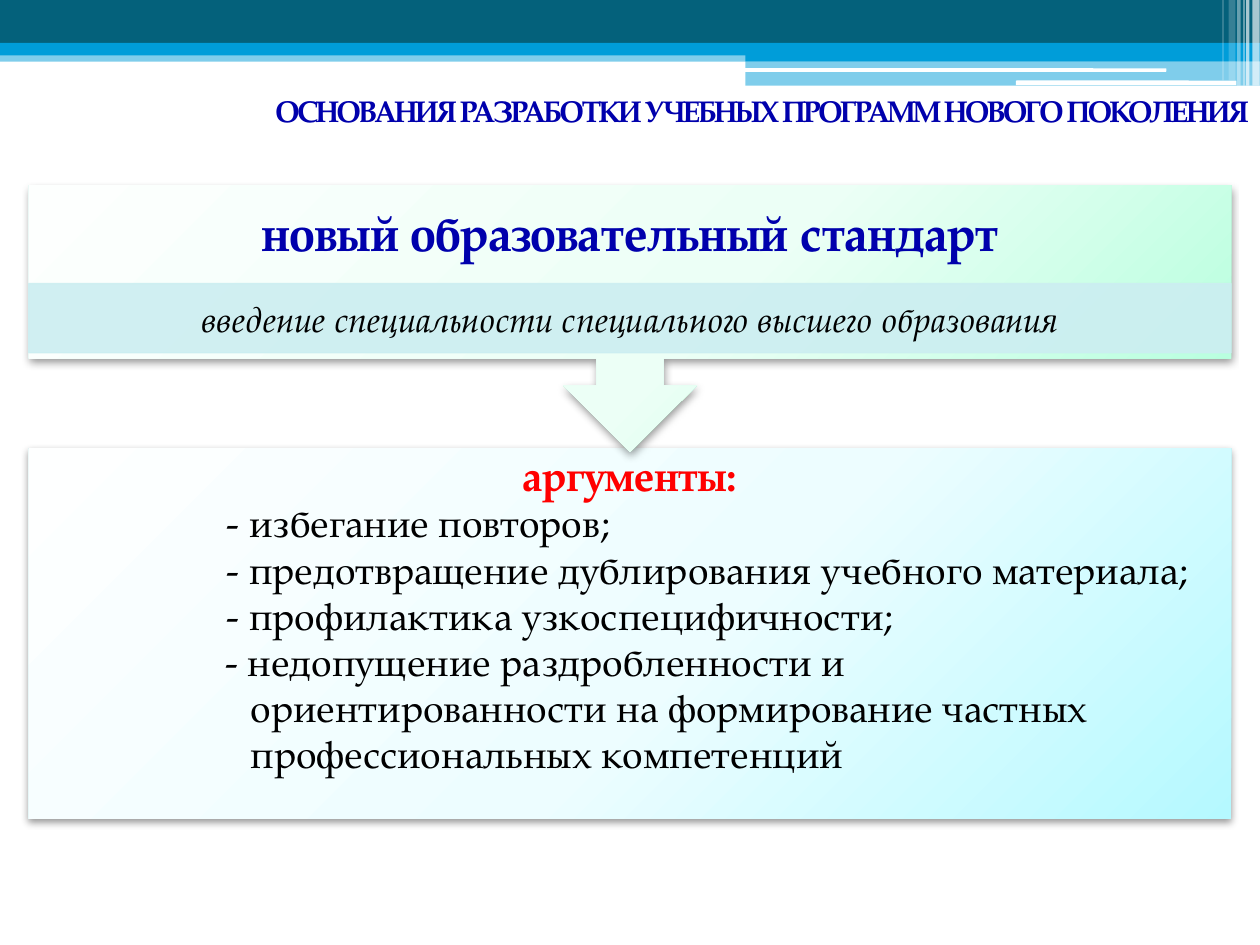
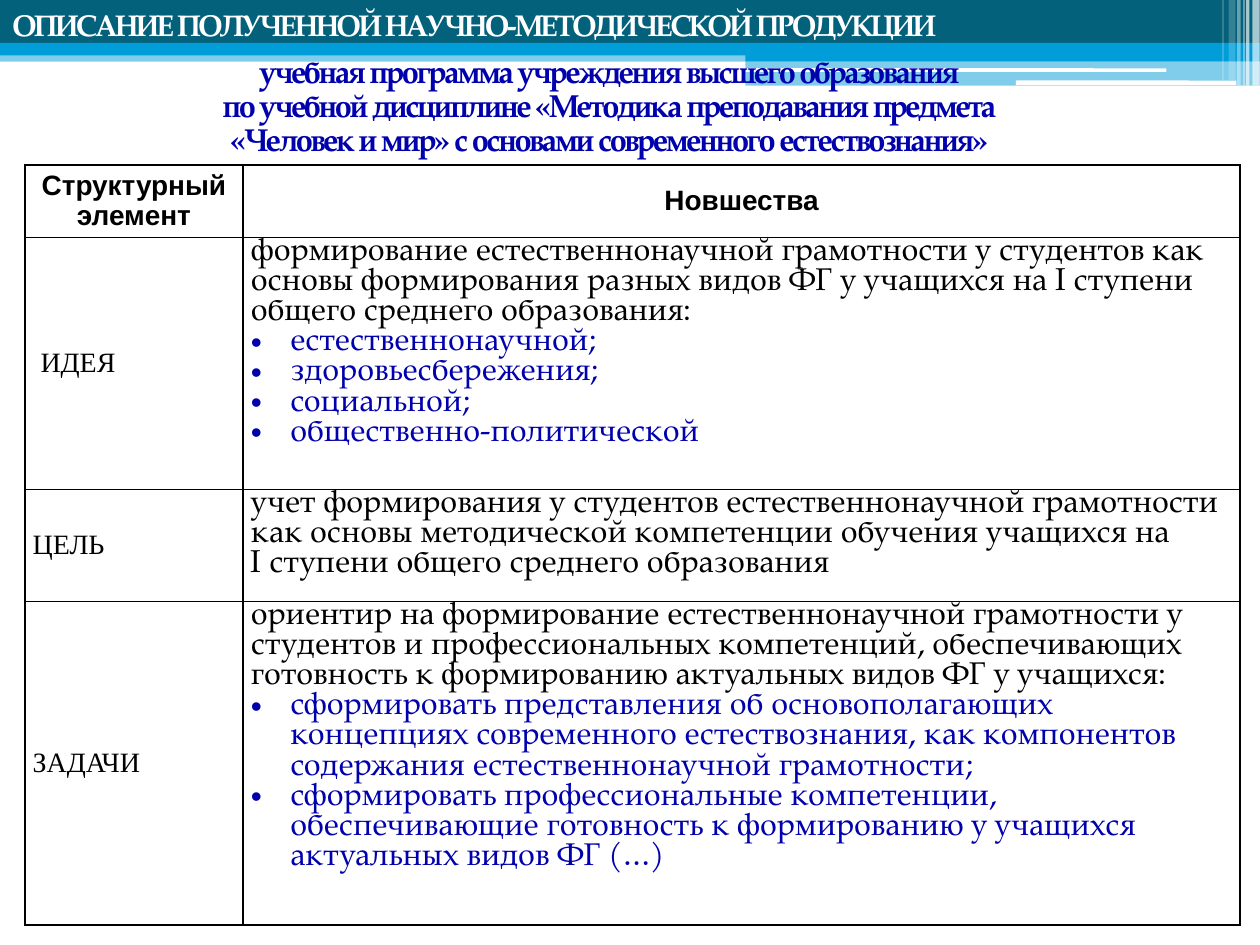
from pptx import Presentation, util as u
from pptx.dml.color import RGBColor
from pptx.enum import shapes, text
from pptx.oxml import parse_xml
from pptx.oxml.ns import nsdecls, qn

SERIF, SANS, TIMES = "TeX Gyre Pagella", "Arial", "Times New Roman"
TEAL, BLUE, WHITE, BLACK = "04617B", "009DD9", "FFFFFF", "000000"
NAVY, RED, PALE = "0000AC", "FF0000", "CCEEF1"
CENTER, RIGHT = text.PP_ALIGN.CENTER, text.PP_ALIGN.RIGHT
TOP, MIDDLE = text.MSO_ANCHOR.TOP, text.MSO_ANCHOR.MIDDLE
RECT, ROUND = shapes.MSO_SHAPE.RECTANGLE, shapes.MSO_SHAPE.ROUNDED_RECTANGLE
CALLOUT = shapes.MSO_SHAPE.UP_ARROW_CALLOUT

BANDS = [
    (0, 28.8, 720, 6.5, BLUE, 50),
    (0, 0, 720, 24.5, TEAL, 100),
    (0, 24.5, 720, 7.2, BLUE, 100),
    (426, 28, 294, 7, BLUE, 100),
    (426, 35, 294, 14, BLUE, 50),
]
PILLS = [(425.5, 39, 241, 2), (580.5, 46, 126, 2.7)]
STRIPES = [
    (715.6, 4.2, 49, 65),
    (712, 2, 49, 65),
    (710.5, 0.7, 49, 60),
    (707, 2, 49, 40),
    (702, 4, 46, 20),
    (698.5, 0.7, 46, 30),
]
MINT_STOPS = [(0, "FDFFFE"), (55, "ECFFF6"), (100, "B1FFDB")]
AQUA_STOPS = [(0, "FEFFFF"), (55, "EDFDFF"), (100, "B5F9FF")]

ARGUMENTS = [
    "- избегание повторов;",
    "- предотвращение дублирования учебного материала;",
    "- профилактика узкоспецифичности;",
]
LAST_ARGUMENT = ("- недопущение раздробленности и ориентированности на "
                 "формирование частных профессиональных компетенций")
PROGRAMME = [
    "учебная программа учреждения высшего образования",
    "по учебной дисциплине «Методика преподавания предмета",
    "«Человек и мир» с основами современного естествознания»",
]
HEADINGS = ["Структурный элемент", "Новшества"]
ELEMENTS = [
    ("ИДЕЯ", 4.5,
     ["формирование естественнонаучной грамотности у студентов как основы "
      "формирования разных видов ФГ у учащихся на I ступени общего среднего "
      "образования:"],
     ["естественнонаучной;", "здоровьесбережения;", "социальной;",
      "общественно-политической"]),
    ("ЦЕЛЬ", 0,
     ["учет формирования у студентов естественнонаучной грамотности как "
      "основы методической компетенции обучения учащихся на",
      "I ступени общего среднего образования"],
     []),
    ("ЗАДАЧИ", 0,
     ["ориентир на формирование естественнонаучной грамотности у студентов и "
      "профессиональных компетенций, обеспечивающих готовность к формированию "
      "актуальных видов ФГ у учащихся:"],
     ["сформировать представления об основополагающих концепциях современного "
      "естествознания, как компонентов содержания естественнонаучной "
      "грамотности;",
      "сформировать профессиональные компетенции, обеспечивающие готовность "
      "к формированию у учащихся актуальных видов ФГ (…)"]),
]


def rgb(value):
    """Turn a hex string into a colour."""
    return RGBColor.from_string(value)


def write(frame, content, size=18, font=SERIF, color=BLACK, bold=False,
          italic=False, align=None, leading=None, left=0, hanging=0,
          bullet=None, tracking=0):
    """Add one formatted paragraph to a text frame."""
    first = frame.paragraphs[0]
    paragraph = frame.add_paragraph() if first.runs else first
    run = paragraph.add_run()
    run.text = content
    run.font.size, run.font.name = u.Pt(size), font
    run.font.bold, run.font.italic = bold, italic
    run.font.color.rgb = rgb(color)
    if tracking:
        run._r.get_or_add_rPr().set("spc", str(int(tracking * 100)))
    paragraph.alignment = align or text.PP_ALIGN.LEFT
    if leading:
        paragraph.line_spacing = leading
    properties = paragraph._p.get_or_add_pPr()
    properties.set("marL", str(u.Pt(left)))
    properties.set("indent", str(u.Pt(-hanging)))
    if bullet:
        properties.append(parse_xml(f'<a:buFont {nsdecls("a")} typeface="{SANS}"/>'))
        properties.append(parse_xml(f'<a:buChar {nsdecls("a")} char="{bullet}"/>'))


class Deck:
    """Hold the shared style and the current slide."""

    def __init__(self):
        """Start a 10 by 7.5 inch presentation."""
        self.show = Presentation()
        self.show.slide_width, self.show.slide_height = u.Pt(720), u.Pt(540)

    def new_slide(self):
        """Add a blank slide with the shared header bands."""
        self.slide = self.show.slides.add_slide(self.show.slide_layouts[6])
        for *box, color, opacity in BANDS:
            self.shape(box, color, opacity)
        for box in PILLS:
            self.shape(box, WHITE, kind=ROUND)
        for x, width, height, opacity in STRIPES:
            self.shape((x, 0, width, height), WHITE, opacity)

    def shape(self, box, color, opacity=100, kind=RECT, outline=None):
        """Draw a flat preset shape."""
        item = self.slide.shapes.add_shape(kind, *map(u.Pt, box))
        item.shadow.inherit = False
        item.fill.solid()
        item.fill.fore_color.rgb = rgb(color)
        if outline:
            item.line.color.rgb = rgb(outline)
            item.line.width = u.Pt(0.75)
        else:
            item.line.fill.background()
        if opacity < 100:
            for tint in item._element.spPr.iter(qn("a:srgbClr")):
                tint.append(parse_xml(
                    f'<a:alpha {nsdecls("a")} val="{opacity * 1000}"/>'))
        return item

    def panel(self, box, stops, kind=RECT, rotation=0):
        """Draw a shape with a radial gradient and a soft shadow."""
        item = self.shape(box, WHITE, kind=kind)
        item.rotation = rotation
        marks = "".join(
            f'<a:gs pos="{place * 1000}"><a:srgbClr val="{color}"/></a:gs>'
            for place, color in stops)
        properties = item._element.spPr
        properties.replace(properties.find(qn("a:solidFill")), parse_xml(
            f'<a:gradFill {nsdecls("a")} rotWithShape="1"><a:gsLst>{marks}</a:gsLst>'
            '<a:path path="circle"><a:fillToRect l="-40000" t="-90000" '
            'r="140000" b="190000"/></a:path></a:gradFill>'))
        properties.find(qn("a:effectLst")).append(parse_xml(
            f'<a:outerShdw {nsdecls("a")} blurRad="{u.Pt(4.1)}" dist="{u.Pt(2)}" '
            'dir="5400000" rotWithShape="0"><a:srgbClr val="000000">'
            '<a:alpha val="40000"/></a:srgbClr></a:outerShdw>'))

    def text_box(self, box, lines=(), anchor=MIDDLE, insets=(7.2, 3.6, 7.2, 3.6),
                 **style):
        """Place a wrapped text box and return its frame."""
        frame = self.slide.shapes.add_textbox(*map(u.Pt, box)).text_frame
        frame.word_wrap, frame.vertical_anchor = True, anchor
        (frame.margin_left, frame.margin_top,
         frame.margin_right, frame.margin_bottom) = map(u.Pt, insets)
        for line in lines:
            write(frame, line, **style)
        return frame

    def title(self, box, content, **style):
        """Place a capital-letter slide title."""
        self.text_box(box, [content], size=17, bold=True, tracking=-1, **style)

    def table(self, box, widths, heights):
        """Add a plain table with thin black borders."""
        grid = self.slide.shapes.add_table(
            len(heights), len(widths), *map(u.Pt, box)).table
        grid.first_row = grid.horz_banding = False
        for column, width in zip(grid.columns, widths):
            column.width = u.Pt(width)
        for row, height in zip(grid.rows, heights):
            row.height = u.Pt(height)
        for cell in grid.iter_cells():
            cell.margin_left = cell.margin_right = u.Pt(4.5)
            cell.margin_top = cell.margin_bottom = 0
            cell.vertical_anchor = MIDDLE
            properties = cell._tc.get_or_add_tcPr()
            for side in ("lnL", "lnR", "lnT", "lnB"):
                properties.append(parse_xml(
                    f'<a:{side} {nsdecls("a")} w="{u.Pt(1)}"><a:solidFill>'
                    f'<a:srgbClr val="{BLACK}"/></a:solidFill></a:{side}>'))
            cell.fill.background()
        return grid


def build_grounds(deck):
    """Build the slide on the grounds for new programmes."""
    deck.new_slide()
    deck.title((0, 49.7, 720, 28), "ОСНОВАНИЯ РАЗРАБОТКИ УЧЕБНЫХ ПРОГРАММ НОВОГО ПОКОЛЕНИЯ",
               color=NAVY, align=RIGHT, anchor=TOP)
    left, width = 16.5, 687
    reasons_box = (left, 256.3, width, 211.7)
    deck.panel(reasons_box, AQUA_STOPS)
    reasons = deck.text_box(reasons_box, ["аргументы:"], insets=(13.7, 2, 13.7, 26),
                            size=24, color=RED, bold=True, align=CENTER)
    for argument in ARGUMENTS:
        write(reasons, argument, size=22, left=99.4)
    write(reasons, LAST_ARGUMENT, size=22, left=113, hanging=14.4)
    deck.panel((left, 105.8, width, 152.6), MINT_STOPS, CALLOUT, 180)
    deck.text_box((left, 105.8, width, 53.5), ["новый образовательный стандарт"],
                  size=28, color=NAVY, bold=True, align=CENTER)
    specialty_box = (left, 162, width, 39.6)
    deck.shape(specialty_box, PALE, 90, outline=PALE)
    deck.text_box(specialty_box, ["введение специальности специального высшего образования"],
                  insets=(11.5, 2.2, 11.5, 2.2), size=20, italic=True, align=CENTER)


def build_results(deck):
    """Build the slide that describes the new programme."""
    deck.new_slide()
    deck.text_box((2.2, 24.5, 692, 74.2), PROGRAMME, insets=(5.8,) * 4, color=NAVY,
                  bold=True, align=CENTER, leading=0.9, tracking=-1)
    deck.title((0, 0, 689, 28), "ОПИСАНИЕ ПОЛУЧЕННОЙ НАУЧНО-МЕТОДИЧЕСКОЙ ПРОДУКЦИИ",
               color=WHITE)
    grid = deck.table((14.2, 94.3, 694.5, 434), (124.7, 569.8), (41.5, 144, 64, 184.5))
    for column, heading in enumerate(HEADINGS):
        write(grid.cell(0, column).text_frame, heading, size=16, font=SANS,
              bold=True, align=CENTER, leading=0.95)
    for row, (element, shift, statements, points) in enumerate(ELEMENTS, 1):
        write(grid.cell(row, 0).text_frame, element, size=16, font=TIMES,
              left=shift, leading=0.95)
        novelty = grid.cell(row, 1)
        novelty.vertical_anchor = TOP
        for statement in statements:
            write(novelty.text_frame, statement, leading=0.95)
        for point in points:
            write(novelty.text_frame, point, color=NAVY, leading=0.95,
                  left=22.5, hanging=22.5, bullet="•")


def main():
    """Build and save both slides."""
    deck = Deck()
    build_grounds(deck)
    build_results(deck)
    deck.show.save("out.pptx")


if __name__ == "__main__":
    main()
